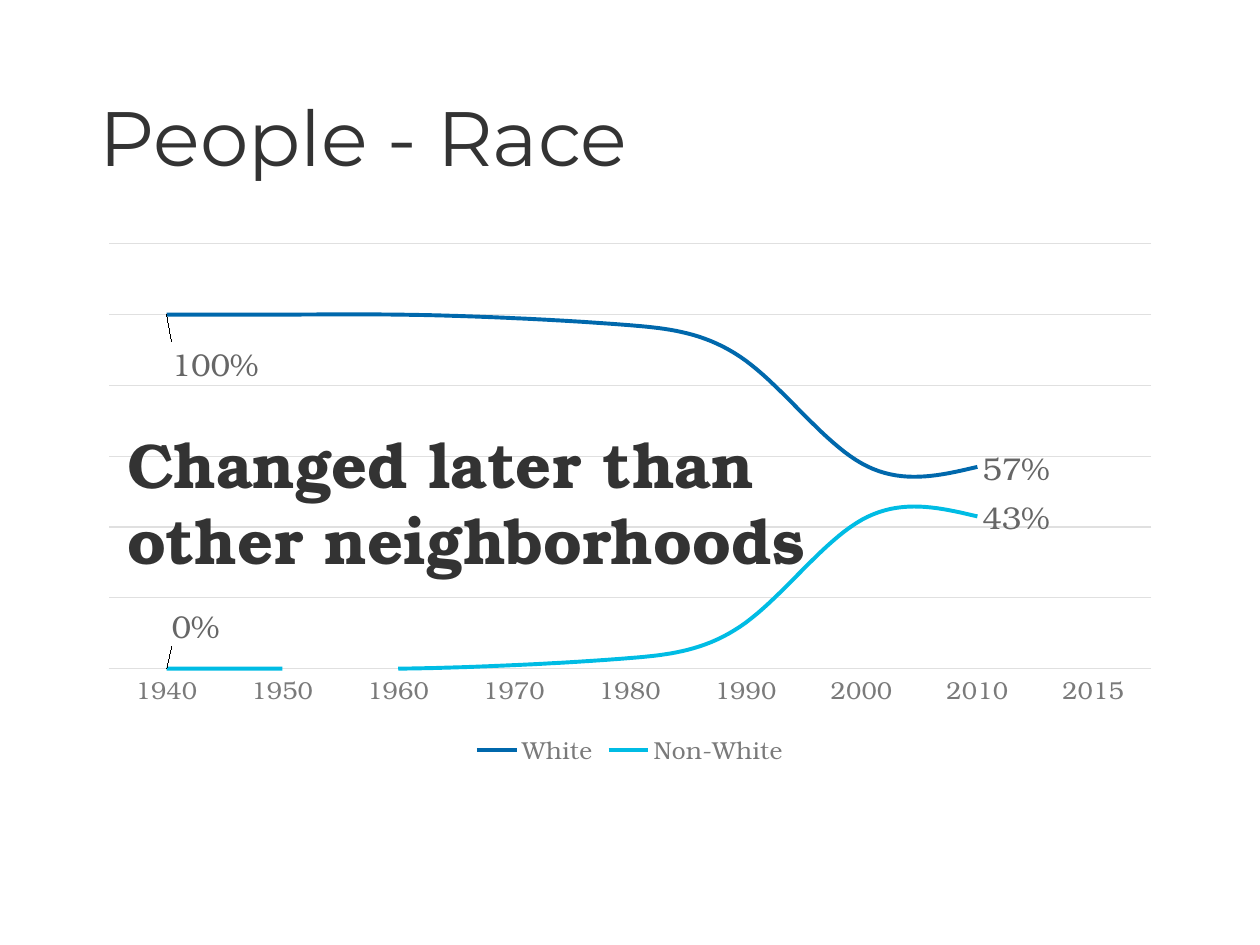
"""Build the slide on racial change, with a line chart and a takeaway."""
from dataclasses import dataclass

import lxml.etree
import pptx
import pptx.chart.data
import pptx.dml.color
import pptx.enum.chart
import pptx.enum.text
import pptx.oxml
import pptx.oxml.ns
import pptx.util

Pt = pptx.util.Pt
RGBColor = pptx.dml.color.RGBColor

DARK = RGBColor(0x33, 0x33, 0x33)
LABEL_GRAY = RGBColor(0x66, 0x66, 0x66)
AXIS_GRAY = RGBColor(0x7A, 0x7A, 0x7A)
GRID_GRAY = RGBColor(0xE0, 0xE0, 0xE0)
BLUE = RGBColor(0x00, 0x68, 0xAC)
CYAN = RGBColor(0x00, 0xBC, 0xE4)
SANS = "Montserrat"
SERIF = "TeX Gyre Bonum"
YEARS = ["1940", "1950", "1960", "1970", "1980", "1990", "2000", "2010", "2015"]
AXIS_FONT = {"name": SERIF, "size": Pt(14), "color": AXIS_GRAY}
LABEL_FONT = {"name": SERIF, "size": Pt(18), "color": LABEL_GRAY}
CHART_NAMESPACE = pptx.oxml.ns.nsdecls("c")
LEADER_LINES = (
    f'<c:extLst {CHART_NAMESPACE}>'
    '<c:ext uri="{CE6537A1-D6FC-4f65-9D91-7224C49458BB}" '
    'xmlns:c15="http://schemas.microsoft.com/office/drawing/2012/chart">'
    '<c15:showLeaderLines val="1"/></c:ext></c:extLst>'
)


@dataclass(frozen=True)
class Box:
    left: float
    top: float
    width: float
    height: float

    def lengths(self) -> list:
        return [Pt(value) for value in (self.left, self.top, self.width, self.height)]


@dataclass(frozen=True)
class TextItem:
    text: str
    box: Box
    font: dict
    frame: dict
    line_spacing: float


@dataclass(frozen=True)
class Share:
    name: str
    values: list
    color: RGBColor
    first_label_shift: float


TEXTS = [
    TextItem("People - Race", Box(49.7, 28.8, 620.6, 104.4),
             {"name": SANS, "size": Pt(44), "color": DARK},
             {"vertical_anchor": pptx.enum.text.MSO_ANCHOR.MIDDLE}, 0.9),
    TextItem("Changed later than other neighborhoods", Box(65.5, 239.8, 435.6, 94.3),
             {"name": SERIF, "size": Pt(36), "bold": True, "color": DARK},
             {"auto_size": pptx.enum.text.MSO_AUTO_SIZE.SHAPE_TO_FIT_TEXT}, 1.0),
]
SHARES = [
    Share("White", [1, 1, 1, 0.99, 0.97, 0.87, 0.58, 0.57, None], BLUE, 0.09),
    Share("Non-White", [0, 0, 0, 0.01, 0.03, 0.13, 0.42, 0.43, None], CYAN, -0.08),
]
CHART_BOX = Box(49.7, 133.2, 620.6, 307.4)
PLOT_BOX = {"x": 0.02, "y": 0.02, "w": 0.96, "h": 0.79}


def set_attributes(target, values: dict) -> None:
    for name, value in values.items():
        setattr(target, name, value)


def set_font(font, values: dict) -> None:
    set_attributes(font, {key: value for key, value in values.items() if key != "color"})
    font.color.rgb = values["color"]


def set_line(line, color: RGBColor, width: float) -> None:
    line.color.rgb = color
    line.width = Pt(width)


def make_layout(modes: dict, values: dict):
    layout = pptx.oxml.parse_xml(f"<c:layout {CHART_NAMESPACE}><c:manualLayout/></c:layout>")
    for tag, value in {**modes, **values}.items():
        lxml.etree.SubElement(layout[0], pptx.oxml.ns.qn(f"c:{tag}")).set("val", str(value))
    return layout


def add_text(slide, item: TextItem) -> None:
    shape = slide.shapes.add_textbox(*item.box.lengths())
    set_attributes(shape.text_frame, {"word_wrap": True, **item.frame})
    paragraph = shape.text_frame.paragraphs[0]
    paragraph.line_spacing = item.line_spacing
    run = paragraph.add_run()
    run.text = item.text
    set_font(run.font, item.font)


def format_series(series, share: Share) -> None:
    series.smooth = True
    series.marker.style = pptx.enum.chart.XL_MARKER_STYLE.NONE
    set_line(series.format.line, share.color, 2.25)
    series.data_labels.show_value = False
    for index in (0, 7):
        label = series.points[index].data_label
        set_font(label.font, LABEL_FONT)
        label.position = pptx.enum.chart.XL_LABEL_POSITION.RIGHT
    labels = series.data_labels._element
    first_label = labels.find(pptx.oxml.ns.qn("c:dLbl"))
    first_label.insert(1, make_layout({}, {"x": 0, "y": share.first_label_shift}))
    labels.append(pptx.oxml.parse_xml(LEADER_LINES))


def add_share_chart(slide) -> None:
    data = pptx.chart.data.CategoryChartData(number_format="0%")
    data.categories = YEARS
    for share in SHARES:
        data.add_series(share.name, share.values)
    chart = slide.shapes.add_chart(
        pptx.enum.chart.XL_CHART_TYPE.LINE, *CHART_BOX.lengths(), data).chart
    set_attributes(chart, {"has_title": False, "has_legend": True})
    set_font(chart.font, {"name": SERIF, "size": Pt(10), "color": DARK})
    set_attributes(chart.legend, {
        "position": pptx.enum.chart.XL_LEGEND_POSITION.BOTTOM, "include_in_layout": False})
    set_font(chart.legend.font, AXIS_FONT)

    no_tick = pptx.enum.chart.XL_TICK_MARK.NONE
    set_attributes(chart.category_axis, {
        "major_tick_mark": no_tick, "minor_tick_mark": no_tick, "has_major_gridlines": False})
    set_font(chart.category_axis.tick_labels.font, AXIS_FONT)
    set_line(chart.category_axis.format.line, GRID_GRAY, 0.75)
    set_attributes(chart.value_axis, {
        "minimum_scale": 0, "maximum_scale": 1.2, "major_unit": 0.2,
        "has_major_gridlines": True, "visible": False})
    set_line(chart.value_axis.major_gridlines.format.line, GRID_GRAY, 0.75)

    plot_area = chart._chartSpace.chart.plotArea
    for old_layout in plot_area.findall(pptx.oxml.ns.qn("c:layout")):
        plot_area.remove(old_layout)
    modes = {"layoutTarget": "inner", "xMode": "edge", "yMode": "edge"}
    plot_area.insert(0, make_layout(modes, PLOT_BOX))
    chart.plots[0].vary_by_categories = False
    for series, share in zip(chart.plots[0].series, SHARES):
        format_series(series, share)


def main() -> None:
    presentation = pptx.Presentation()
    set_attributes(presentation, {"slide_width": Pt(720), "slide_height": Pt(540)})
    slide = presentation.slides.add_slide(presentation.slide_layouts[6])
    add_share_chart(slide)
    for item in TEXTS:
        add_text(slide, item)
    presentation.save("out.pptx")


if __name__ == "__main__":
    main()
